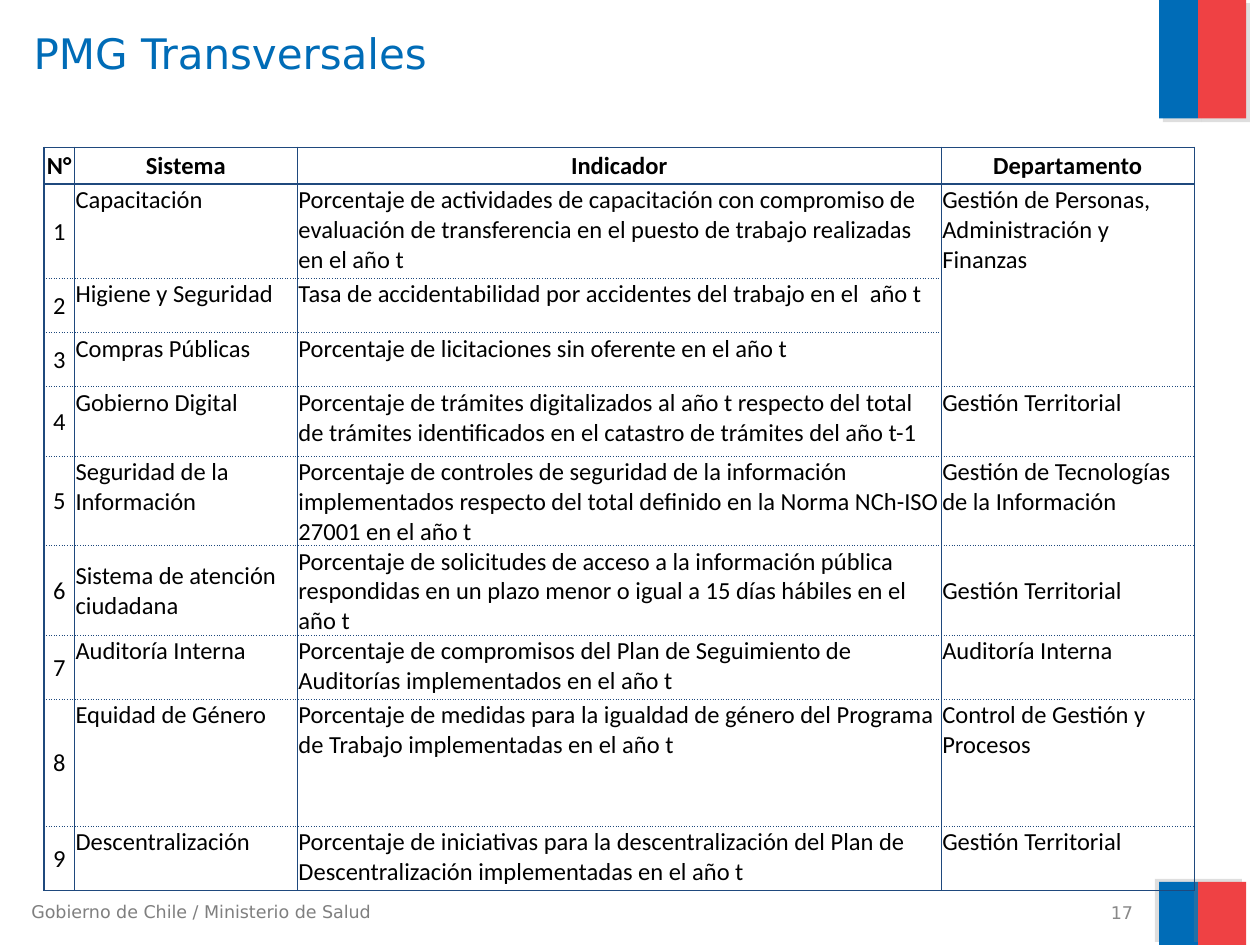
from lxml import etree
from pptx import Presentation
from pptx.dml.color import RGBColor
from pptx.enum.shapes import MSO_SHAPE
from pptx.enum.text import MSO_ANCHOR, PP_ALIGN
from pptx.oxml.ns import qn
from pptx.util import Pt

RECT = MSO_SHAPE.RECTANGLE
TOP, MIDDLE = MSO_ANCHOR.TOP, MSO_ANCHOR.MIDDLE
LEFT, CENTER, RIGHT = PP_ALIGN.LEFT, PP_ALIGN.CENTER, PP_ALIGN.RIGHT

BLUE, RED, NAVY, BLACK = "006CB7", "EF4144", "1F497D", "000000"
SANS, BODY = "DejaVu Sans", "Calibri"

COLS = [17.3, 127.4, 367.9, 144.7]
HEIGHTS = [20.9, 54, 31, 31, 39.6, 38.9, 40.3, 36.7, 72.7, 36.7]
HEAD = ["N°", "Sistema", "Indicador", "Departamento"]
ROWS = [
    ("Capacitación",
     "Porcentaje de actividades de capacitación con compromiso de evaluación "
     "de transferencia en el puesto de trabajo realizadas en el año t",
     "Gestión de Personas, Administración y Finanzas"),
    ("Higiene y Seguridad",
     "Tasa de accidentabilidad por accidentes del trabajo en el  año t", ""),
    ("Compras Públicas",
     "Porcentaje de licitaciones sin oferente en el año t", ""),
    ("Gobierno Digital",
     "Porcentaje de trámites digitalizados al año t respecto del total de "
     "trámites identificados en el catastro de trámites del año t-1",
     "Gestión Territorial"),
    ("Seguridad de la Información",
     "Porcentaje de controles de seguridad de la información implementados "
     "respecto del total definido en la Norma NCh-ISO 27001 en el año t",
     "Gestión de Tecnologías de la Información"),
    ("Sistema de atención ciudadana",
     "Porcentaje de solicitudes de acceso a la información pública "
     "respondidas en un plazo menor o igual a 15 días hábiles en el año t",
     "Gestión Territorial"),
    ("Auditoría Interna",
     "Porcentaje de compromisos del Plan de Seguimiento de Auditorías "
     "implementados en el año t",
     "Auditoría Interna"),
    ("Equidad de Género",
     "Porcentaje de medidas para la igualdad de género del Programa de "
     "Trabajo implementadas en el año t",
     "Control de Gestión y Procesos"),
    ("Descentralización",
     "Porcentaje de iniciativas para la descentralización del Plan de "
     "Descentralización implementadas en el año t",
     "Gestión Territorial"),
]
MID_ROW = 6  # the one body row whose text is centred vertically


def color(code):
    return RGBColor.from_string(code)


def add_xml(parent, tag, **attrs):
    return etree.SubElement(parent, qn(tag), attrs)


def add_run(frame, text, size, font, code, align=LEFT, bold=False):
    para = frame.paragraphs[0]
    para.alignment = align
    run = para.add_run()
    run.text = text
    run.font.size = Pt(size)
    run.font.name = font
    run.font.bold = bold
    run.font.color.rgb = color(code)


def add_bar(slide, left, top, width, height, code, angle):
    bar = slide.shapes.add_shape(RECT, Pt(left), Pt(top), Pt(width), Pt(height))
    bar.fill.solid()
    bar.fill.fore_color.rgb = color(code)
    bar.line.fill.background()
    # Soft grey shadow, 3 pt away
    bar.shadow.inherit = False
    effects = bar._element.spPr.find(qn("a:effectLst"))
    shade = add_xml(effects, "a:outerShdw", blurRad="0", dist=str(Pt(3)),
                    dir=str(angle * 60000), algn="ctr", rotWithShape="0")
    tint = add_xml(shade, "a:srgbClr", val="808080")
    add_xml(tint, "a:alpha", val="25000")


def add_label(slide, box, text, size, code, align=LEFT, anchor=TOP):
    frame = slide.shapes.add_textbox(*map(Pt, box)).text_frame
    frame.word_wrap = True
    frame.vertical_anchor = anchor
    add_run(frame, text, size, SANS, code, align)


def add_edge(cell, side, width, dash):
    line = add_xml(cell._tc.get_or_add_tcPr(), "a:ln" + side, w=str(Pt(width)))
    add_xml(add_xml(line, "a:solidFill"), "a:srgbClr", val=NAVY)
    add_xml(line, "a:prstDash", val=dash)


def style_cell(cell, row, col, last):
    # Solid rules frame the header and the table; dots part the body rows
    thick, dots = (1, "solid"), (0.5, "dot")
    add_edge(cell, "L", 0.5 if col else 1, "solid")
    add_edge(cell, "R", 0.5, "solid")
    add_edge(cell, "T", *(thick if row < 2 else dots))
    add_edge(cell, "B", *(thick if row in (0, last) else dots))
    cell.fill.background()
    cell.margin_left = cell.margin_right = cell.margin_top = Pt(0.7)
    cell.margin_bottom = 0
    cell.vertical_anchor = MIDDLE if col == 0 or row in (0, MID_ROW) else TOP


def add_grid(slide):
    data = [HEAD] + [(str(n), *row) for n, row in enumerate(ROWS, 1)]
    table = slide.shapes.add_table(
        len(data), len(COLS), Pt(25.2), Pt(84.2),
        Pt(sum(COLS)), Pt(sum(HEIGHTS))).table
    table.first_row = table.horz_banding = False
    for col, width in zip(table.columns, COLS):
        col.width = Pt(width)
    for row, height in zip(table.rows, HEIGHTS):
        row.height = Pt(height)
    for r, texts in enumerate(data):
        for c, text in enumerate(texts):
            cell = table.cell(r, c)
            style_cell(cell, r, c, len(data) - 1)
            if text:
                align = CENTER if r == 0 or c == 0 else LEFT
                add_run(cell.text_frame, text, 14, BODY, BLACK, align, r == 0)
    # One department serves the first three systems
    table.cell(1, 3).merge(table.cell(3, 3))


def main():
    deck = Presentation()
    deck.slide_width, deck.slide_height = Pt(720), Pt(540)
    slide = deck.slides.add_slide(deck.slide_layouts[6])

    # Flag bars at the top and bottom right
    for top, height, angle in [(-0.3, 68, 45), (504, 36, 215)]:
        add_bar(slide, 662.4, top, 22.3, height, BLUE, angle)
        add_bar(slide, 684.7, top, 27.4, height, RED, angle)

    # Footer, title and page number
    add_label(slide, (10.8, 511.2, 217.4, 19.4),
              "Gobierno de Chile / Ministerio de Salud", 10, "7F7F7F")
    add_label(slide, (12.2, 12.2, 643, 90), "PMG Transversales", 24, BLUE)
    add_label(slide, (486.7, 514.1, 167.8, 15.1), "17", 10, "898989",
              RIGHT, MIDDLE)

    # Table of systems
    add_grid(slide)
    deck.save("out.pptx")


if __name__ == "__main__":
    main()
